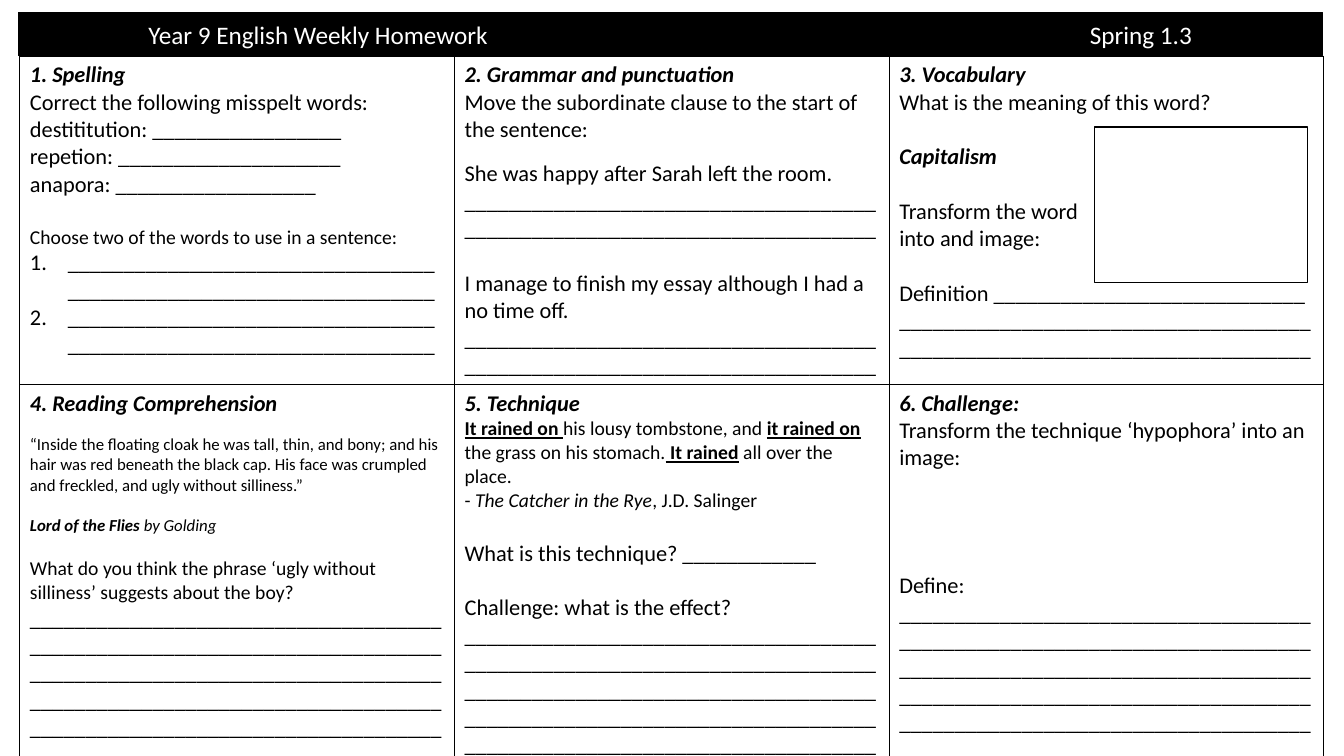
from lxml import etree
from pptx import Presentation
from pptx.dml.color import RGBColor
from pptx.enum.shapes import MSO_SHAPE
from pptx.enum.text import MSO_ANCHOR, PP_ALIGN
from pptx.oxml.ns import qn
from pptx.util import Pt

BLACK = RGBColor(0, 0, 0)
WHITE = RGBColor(255, 255, 255)
RECTANGLE = MSO_SHAPE.RECTANGLE
MIDDLE = MSO_ANCHOR.MIDDLE
LEFT = PP_ALIGN.LEFT

FONT = "Calibri"
LINE_HEIGHT = 1.22
COLUMN_WIDTH = 310.5
ROW_HEIGHTS = (230, 268.6)
FULL_LINE = "_" * 37
LIST_LINE = "_" * 33
INDENT = Pt(27)


def line(*runs, size=16, gap=0, numbered=False):
    """One paragraph: runs are (text, style letters b, i, u); gap is the empty space above."""
    return {"runs": runs, "size": size, "gap": gap, "numbered": numbered}


def plain(text, **options):
    return line((text, ""), **options)


def heading(text):
    return line((text, "bi"))


TASKS = [
    [
        [
            heading("1. Spelling"),
            plain("Correct the following misspelt words:"),
            plain("destititution: " + "_" * 17),
            plain("repetion: " + "_" * 20),
            plain("anapora: " + "_" * 18),
            plain("Choose two of the words to use in a sentence:", size=14, gap=16),
            plain(LIST_LINE * 2, numbered=True),
            plain(LIST_LINE * 2, numbered=True),
        ],
        [
            heading("2. Grammar and punctuation"),
            plain("Move the subordinate clause to the start of the sentence:"),
            plain("She was happy after Sarah left the room.", gap=10),
            plain(FULL_LINE * 2),
            plain("I manage to finish my essay although I had a no time off.", gap=16),
            plain(FULL_LINE * 2),
        ],
        [
            heading("3. Vocabulary"),
            plain("What is the meaning of this word?"),
            line(("Capitalism", "bi"), gap=16),
            plain("Transform the word", gap=16),
            plain("into and image:"),
            plain("Definition " + "_" * 28 + " " + FULL_LINE * 2, gap=16),
        ],
    ],
    [
        [
            heading("4. Reading Comprehension"),
            plain("“Inside the floating cloak he was tall, thin, and bony; and his hair was red "
                  "beneath the black cap. His face was crumpled and freckled, and ugly without "
                  "silliness.”", size=12, gap=10),
            line(("Lord of the Flies ", "bi"), ("by Golding", "i"), size=12, gap=12),
            plain("What do you think the phrase ‘ugly without silliness’ suggests about the boy?",
                  size=14, gap=12),
            plain(FULL_LINE * 5),
        ],
        [
            heading("5. Technique"),
            line(("It rained on ", "bu"), ("his lousy tombstone, and ", ""),
                 ("it rained on ", "bu"), ("the grass on his stomach.", ""),
                 (" It rained", "bu"), (" all over the place.", ""), size=14),
            line(("- ", ""), ("The Catcher in the Rye", "i"), (", J.D. Salinger", ""), size=14),
            plain("What is this technique? " + "_" * 12, gap=16),
            plain("Challenge: what is the effect? " + FULL_LINE * 5, gap=16),
        ],
        [
            heading("6. Challenge:"),
            plain("Transform the technique ‘hypophora’ into an image:"),
            plain("Define: " + FULL_LINE * 5, gap=16 * 3 + 11),
        ],
    ],
]


def set_style(font, style):
    font.bold = "b" in style
    font.italic = "i" in style
    font.underline = "u" in style


def number_paragraph(paragraph):
    properties = paragraph._p.get_or_add_pPr()
    properties.set("marL", str(INDENT))
    properties.set("indent", str(-INDENT))
    numbering = etree.Element(qn("a:buAutoNum"), type="arabicPeriod")
    properties.insert_element_before(numbering, "a:tabLst", "a:defRPr", "a:extLst")


def write_line(paragraph, content):
    paragraph.font.name = FONT
    paragraph.font.size = Pt(content["size"])
    paragraph.font.color.rgb = BLACK
    paragraph.space_before = Pt(content["gap"] * LINE_HEIGHT)
    runs = content["runs"]
    if len(runs) == 1:
        set_style(paragraph.font, runs[0][1])
    for text, style in runs:
        run = paragraph.add_run()
        run.text = text
        if len(runs) > 1:
            set_style(run.font, style)
    if content["numbered"]:
        number_paragraph(paragraph)


def add_borders(cell):
    properties = cell._tc.get_or_add_tcPr()
    for position, side in enumerate(("lnL", "lnR", "lnT", "lnB")):
        border = etree.Element(qn("a:" + side), w=str(Pt(1)))
        fill = etree.SubElement(border, qn("a:solidFill"))
        etree.SubElement(fill, qn("a:srgbClr"), val=str(BLACK))
        properties.insert(position, border)


def fill_cell(cell, lines):
    cell.fill.solid()
    cell.fill.fore_color.rgb = WHITE
    add_borders(cell)
    frame = cell.text_frame
    for number, content in enumerate(lines):
        paragraph = frame.add_paragraph() if number else frame.paragraphs[0]
        write_line(paragraph, content)


def paint(shape, fill_color):
    shape.fill.solid()
    shape.fill.fore_color.rgb = fill_color
    shape.line.color.rgb = BLACK
    shape.line.width = Pt(1)


def add_header(slide, title, term):
    header = slide.shapes.title
    header.left, header.top, header.width, header.height = Pt(13), Pt(8.8), Pt(931.7), Pt(31)
    paint(header, BLACK)
    frame = header.text_frame
    frame.word_wrap = True
    frame.vertical_anchor = MIDDLE
    frame.margin_left = Pt(93)
    frame.margin_top = frame.margin_bottom = 0
    frame.text = f"{title}\t{term}"
    paragraph = frame.paragraphs[0]
    paragraph.alignment = LEFT
    paragraph.font.name = FONT
    paragraph.font.size = Pt(18)
    paragraph.font.color.rgb = WHITE
    # The term starts at a tab stop near the right edge
    tabs = etree.Element(qn("a:tabLst"))
    etree.SubElement(tabs, qn("a:tab"), pos=str(Pt(672.5)), algn="l")
    paragraph._p.get_or_add_pPr().insert_element_before(tabs, "a:defRPr", "a:extLst")


def add_task_grid(slide):
    columns = len(TASKS[0])
    table = slide.shapes.add_table(len(TASKS), columns, Pt(14.2), Pt(40.2),
                                   Pt(COLUMN_WIDTH * columns), Pt(sum(ROW_HEIGHTS))).table
    table.first_row = table.horz_banding = False
    for column in table.columns:
        column.width = Pt(COLUMN_WIDTH)
    for row, height, tasks in zip(table.rows, ROW_HEIGHTS, TASKS):
        row.height = Pt(height)
        for cell, lines in zip(row.cells, tasks):
            fill_cell(cell, lines)


def add_drawing_box(slide):
    box = slide.shapes.add_shape(RECTANGLE, Pt(782), Pt(90.7), Pt(152), Pt(111))
    box.shadow.inherit = False
    paint(box, WHITE)


def main():
    deck = Presentation()
    deck.slide_width, deck.slide_height = Pt(960), Pt(540)
    slide = deck.slides.add_slide(deck.slide_layouts.get_by_name("Title Only"))
    add_header(slide, "Year 9 English Weekly Homework", "Spring 1.3")
    add_task_grid(slide)
    add_drawing_box(slide)
    deck.save("out.pptx")


if __name__ == "__main__":
    main()
